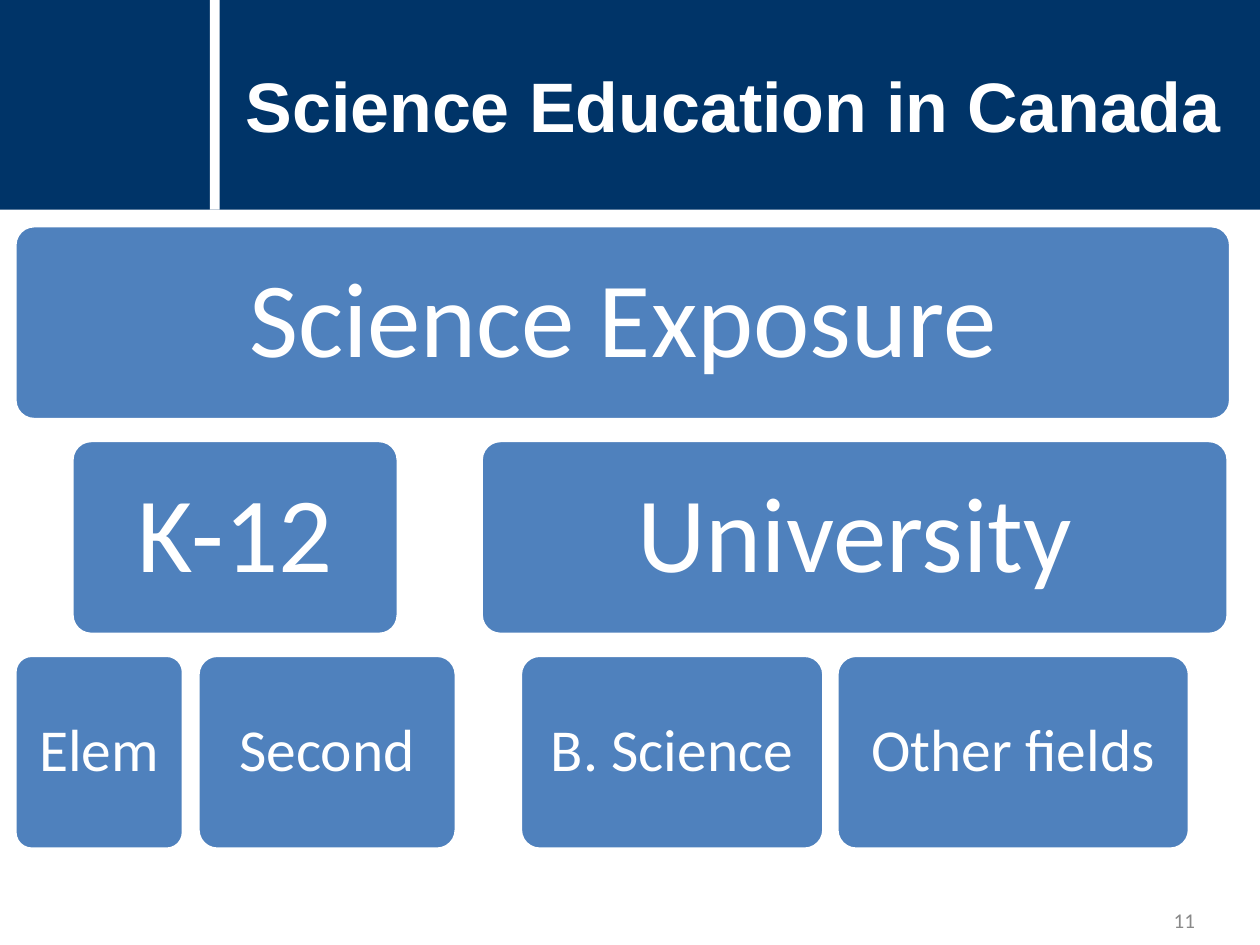
"""Build the Science Education in Canada slide with its hierarchy of study levels."""
from dataclasses import dataclass

from pptx import Presentation
from pptx import util as u
from pptx.dml.color import RGBColor
from pptx.enum import shapes, text


@dataclass(frozen=True)
class Theme:
    navy: str = "003468"
    blue: str = "4F81BD"
    white: str = "FFFFFF"
    grey: str = "898989"
    heading_font: str = "Arial"
    body_font: str = "Calibri"
    title_size: int = 40
    large_size: int = 61
    small_size: int = 34
    number_size: int = 12


theme = Theme()


def add_block(kind, left, top, width, height, fill):
    block = page.shapes.add_shape(kind, u.Cm(left), u.Cm(top), u.Cm(width), u.Cm(height))
    block.shadow.inherit = False
    block.fill.solid()
    block.fill.fore_color.rgb = RGBColor.from_string(fill)
    block.line.fill.background()
    return block


def write(box, words, font, size, color, align, bold=False):
    frame = box.text_frame
    frame.text = words
    frame.word_wrap = True
    frame.vertical_anchor = text.MSO_ANCHOR.MIDDLE
    para = frame.paragraphs[0]
    para.alignment = align
    span = para.runs[0]
    span.font.name = font
    span.font.size = u.Pt(size)
    span.font.bold = bold
    span.font.color.rgb = RGBColor.from_string(color)
    return para


deck = Presentation()
deck.slide_width, deck.slide_height = u.Cm(25.4), u.Cm(19.05)
page = deck.slides.add_slide(deck.slide_layouts[6])

header_height = 4.23
add_block(shapes.MSO_SHAPE.RECTANGLE, 0, 0, 25.4, header_height, theme.navy)
add_block(shapes.MSO_SHAPE.RECTANGLE, 4.23, 0, 0.2, header_height, theme.white)

title = page.shapes.add_textbox(u.Cm(4.7), u.Cm(0.61), u.Cm(20.8), u.Cm(3))
write(title, "Science Education in Canada", theme.heading_font, theme.title_size,
      theme.white, text.PP_ALIGN.LEFT, bold=True)

number = page.shapes.add_textbox(u.Cm(18.42), u.Cm(18.03), u.Cm(5.92), u.Cm(1.02))
write(number, "11", theme.body_font, theme.number_size, theme.grey, text.PP_ALIGN.RIGHT)

first_top, row_pitch, row_height, corner = 4.55, 4.33, 3.91, 0.1
levels = [
    (theme.large_size, 0.64, [("Science Exposure", 0.3, 24.51)]),
    (theme.large_size, 0.64, [("K-12", 1.45, 6.58), ("University", 9.7, 15.06)]),
    (theme.small_size, 0.36, [("Elem", 0.3, 3.4), ("Second", 3.99, 5.21),
                              ("B. Science", 10.49, 6.12), ("Other fields", 16.87, 7.11)]),
]
for row, (size, inset, entries) in enumerate(levels):
    for label, left, width in entries:
        box = add_block(shapes.MSO_SHAPE.ROUNDED_RECTANGLE, left, first_top + row * row_pitch,
                        width, row_height, theme.blue)
        box.adjustments[0] = corner
        box.line.color.rgb = RGBColor.from_string(theme.white)
        box.line.width = u.Pt(2)
        frame = box.text_frame
        frame.margin_left = frame.margin_right = u.Cm(inset)
        frame.margin_top = frame.margin_bottom = u.Cm(inset)
        para = write(box, label, theme.body_font, size, theme.white, text.PP_ALIGN.CENTER)
        para.line_spacing = 0.9

deck.save("out.pptx")
